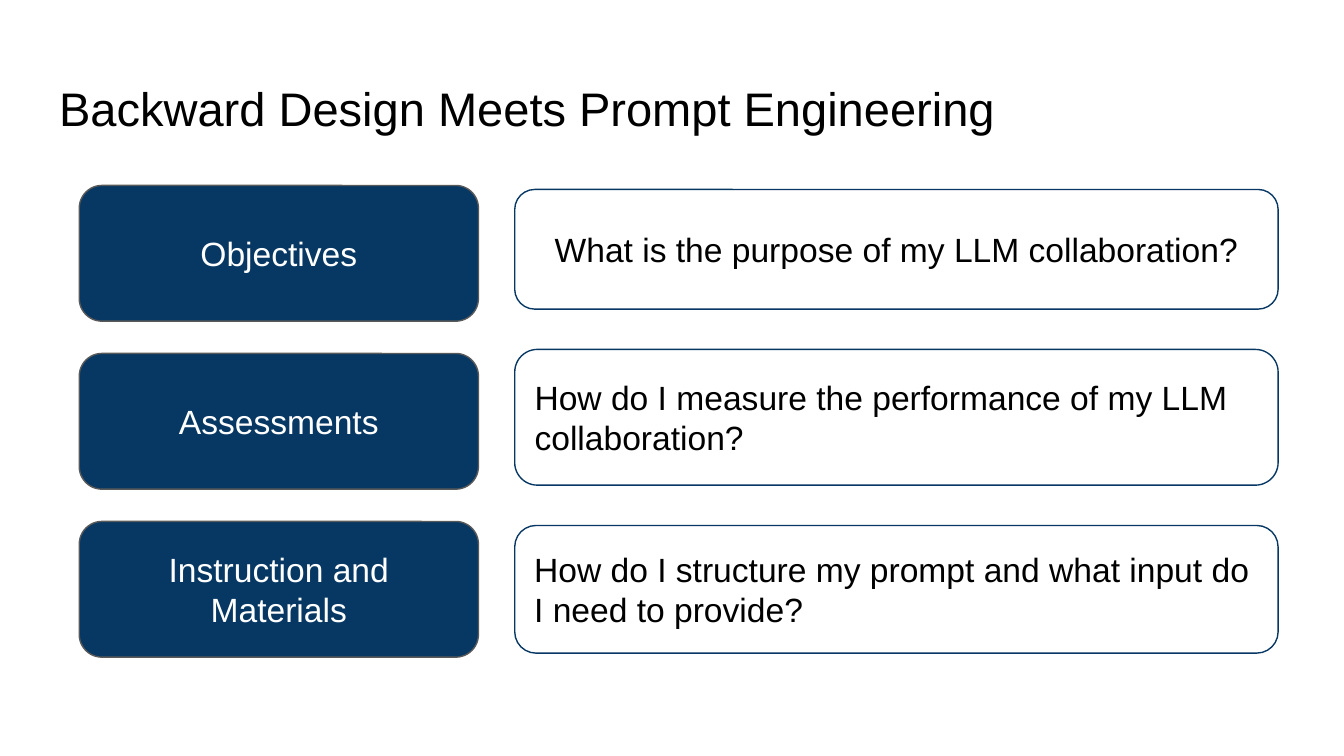
import dataclasses

import pptx
import pptx.dml.color
import pptx.enum.shapes
import pptx.enum.text
import pptx.util

Inches = pptx.util.Inches
Pt = pptx.util.Pt
RGBColor = pptx.dml.color.RGBColor
PP_ALIGN = pptx.enum.text.PP_ALIGN
MSO_ANCHOR = pptx.enum.text.MSO_ANCHOR


@dataclasses.dataclass(frozen=True)
class Theme:
    """Colours, font and type sizes of the slide."""
    font: str = "Arial"
    navy: str = "073763"
    grey: str = "595959"
    white: str = "FFFFFF"
    black: str = "000000"
    title_size: float = 25.2
    body_size: float = 18
    line_width: float = 0.75


THEME = Theme()


def set_text(sp, text, size, color, align, anchor):
    """Write one run of text into a shape with even insets."""
    tf = sp.text_frame
    tf.word_wrap = True
    tf.auto_size = pptx.enum.text.MSO_AUTO_SIZE.NONE
    tf.vertical_anchor = anchor
    tf.margin_left = tf.margin_right = Inches(0.1)
    tf.margin_top = tf.margin_bottom = Inches(0.1)
    p = tf.paragraphs[0]
    p.alignment = align
    r = p.add_run()
    r.text = text
    r.font.name = THEME.font
    r.font.size = Pt(size)
    r.font.color.rgb = RGBColor.from_string(color)


def add_title(s, text):
    """Place and fill the title placeholder."""
    sp = s.shapes.title
    sp.left, sp.top = Inches(0.34), Inches(0.49)
    sp.width, sp.height = Inches(9.32), Inches(0.63)
    set_text(sp, text, THEME.title_size, THEME.black, PP_ALIGN.LEFT, MSO_ANCHOR.TOP)


def add_box(s, box, text, fill, line, color, align):
    """Add a rounded box with middle-anchored text."""
    kind = pptx.enum.shapes.MSO_SHAPE.ROUNDED_RECTANGLE
    sp = s.shapes.add_shape(kind, *map(Inches, box))
    sp.shadow.inherit = False
    sp.fill.solid()
    sp.fill.fore_color.rgb = RGBColor.from_string(fill)
    sp.line.color.rgb = RGBColor.from_string(line)
    sp.line.width = Pt(THEME.line_width)
    set_text(sp, text, THEME.body_size, color, align, MSO_ANCHOR.MIDDLE)


def add_stage(s, top, text):
    """Add a filled box that names a design stage."""
    add_box(s, (0.59, top, 2.97, 1.01), text,
            THEME.navy, THEME.grey, THEME.white, PP_ALIGN.CENTER)


def add_question(s, top, height, text, align):
    """Add an outlined box with the question for a stage."""
    add_box(s, (3.83, top, 5.68, height), text,
            THEME.white, THEME.navy, THEME.black, align)


def main():
    """Build the slide and save it."""
    prs = pptx.Presentation()
    prs.slide_width = Inches(10)
    prs.slide_height = prs.slide_width * 9 // 16
    s = prs.slides.add_slide(prs.slide_layouts.get_by_name("Title Only"))
    add_title(s, "Backward Design Meets Prompt Engineering")

    stages = ["Objectives", "Assessments", "Instruction and Materials"]
    for i, stage in enumerate(stages):
        add_stage(s, 1.38 + 1.25 * i, stage)

    questions = [
        (1.41, 0.89, "What is the purpose of my LLM collaboration?", PP_ALIGN.CENTER),
        (2.6, 1.01, "How do I measure the performance of my LLM collaboration?",
         PP_ALIGN.LEFT),
        (3.91, 0.95, "How do I structure my prompt and what input do I need to provide?",
         PP_ALIGN.LEFT),
    ]
    for question in questions:
        add_question(s, *question)

    prs.save("out.pptx")


if __name__ == "__main__":
    main()
